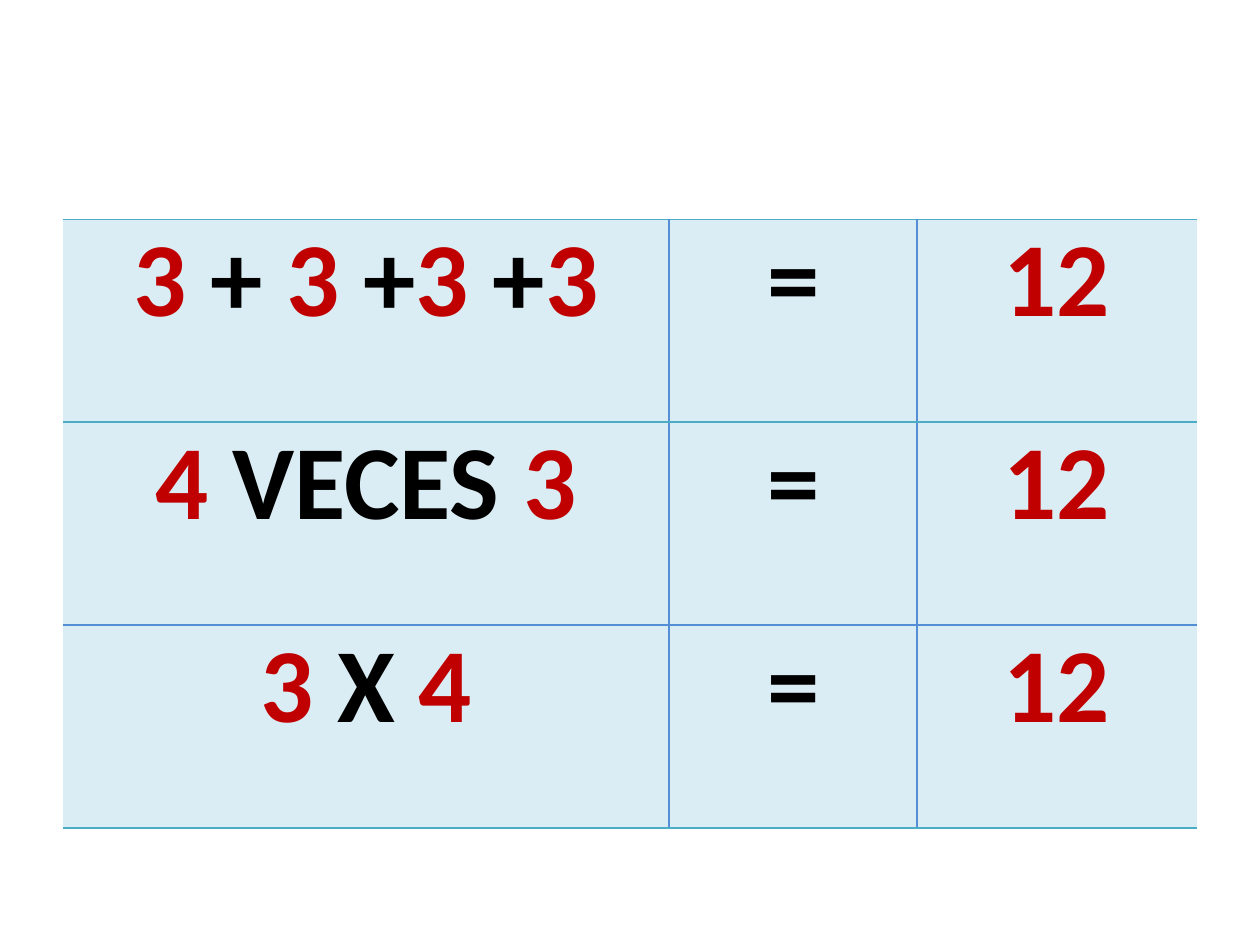
from dataclasses import dataclass
from itertools import groupby

from lxml import etree
from pptx import Presentation
from pptx.dml.color import RGBColor
from pptx.enum.text import PP_ALIGN
from pptx.oxml.ns import qn
from pptx.util import Inches, Pt

CENTER = PP_ALIGN.CENTER


@dataclass(frozen=True)
class Theme:
    """Colours, font and sizes of the slide."""
    digit: str = "C00000"
    sign: str = "000000"
    fill: str = "DBEDF4"
    teal: str = "4AACC5"
    blue: str = "548ED4"
    font: str = "Calibri"
    size: float = 60
    lead: float = 71.8
    line: float = 1


THEME = Theme()
SUMS = [
    ("3 + 3 +3 +3", "=", "12"),
    ("4 VECES 3", "=", "12"),
    ("3 X 4", "=", "12"),
]
WIDTHS = [4.81, 1.97, 2.22]
HEIGHT = 1.61
ROW_LINES = [THEME.teal, THEME.teal, THEME.blue, THEME.teal]
COL_LINES = [None, THEME.blue, THEME.blue, None]


def apply(target, values):
    """Set each named attribute on the target."""
    for name, value in values.items():
        setattr(target, name, value)


def add_edge(cell, side, color):
    """Draw one cell border, or clear it when there is no colour."""
    props = cell._tc.get_or_add_tcPr()
    edge = etree.SubElement(props, qn(f"a:ln{side}"), w=str(Pt(THEME.line)))
    if color is None:
        etree.SubElement(edge, qn("a:noFill"))
    else:
        paint = etree.SubElement(edge, qn("a:solidFill"))
        etree.SubElement(paint, qn("a:srgbClr"), val=color)


def add_text(cell, text):
    """Write centred text with red digits and black signs."""
    para = cell.text_frame.paragraphs[0]
    apply(para, {"alignment": CENTER, "line_spacing": Pt(THEME.lead)})
    for digit, chars in groupby(text, str.isdigit):
        run = para.add_run()
        run.text = "".join(chars)
        apply(run.font, {"name": THEME.font, "size": Pt(THEME.size), "bold": True})
        color = THEME.digit if digit else THEME.sign
        run.font.color.rgb = RGBColor.from_string(color)


def style_cell(cell, row, col):
    """Set the margins, borders and fill of a cell."""
    apply(cell, {f"margin_{side}": 0 for side in ("left", "right", "top", "bottom")})
    edges = {
        "L": COL_LINES[col],
        "R": COL_LINES[col + 1],
        "T": ROW_LINES[row],
        "B": ROW_LINES[row + 1],
    }
    for side, color in edges.items():
        add_edge(cell, side, color)
    cell.fill.solid()
    cell.fill.fore_color.rgb = RGBColor.from_string(THEME.fill)


def add_sums(slide):
    """Add the table of sums."""
    frame = slide.shapes.add_table(
        len(SUMS), len(WIDTHS), Inches(0.5), Inches(1.74),
        Inches(sum(WIDTHS)), Inches(HEIGHT * len(SUMS)),
    )
    table = frame.table
    apply(table, {"first_row": False, "horz_banding": False})
    for column, width in zip(table.columns, WIDTHS):
        column.width = Inches(width)
    for row, texts in enumerate(SUMS):
        table.rows[row].height = Inches(HEIGHT)
        for col, text in enumerate(texts):
            cell = table.cell(row, col)
            style_cell(cell, row, col)
            add_text(cell, text)


def main():
    """Build and save the slide."""
    deck = Presentation()
    apply(deck, {"slide_width": Inches(10), "slide_height": Inches(7.5)})
    slide = deck.slides.add_slide(deck.slide_layouts[6])
    add_sums(slide)
    deck.save("out.pptx")


if __name__ == "__main__":
    main()
